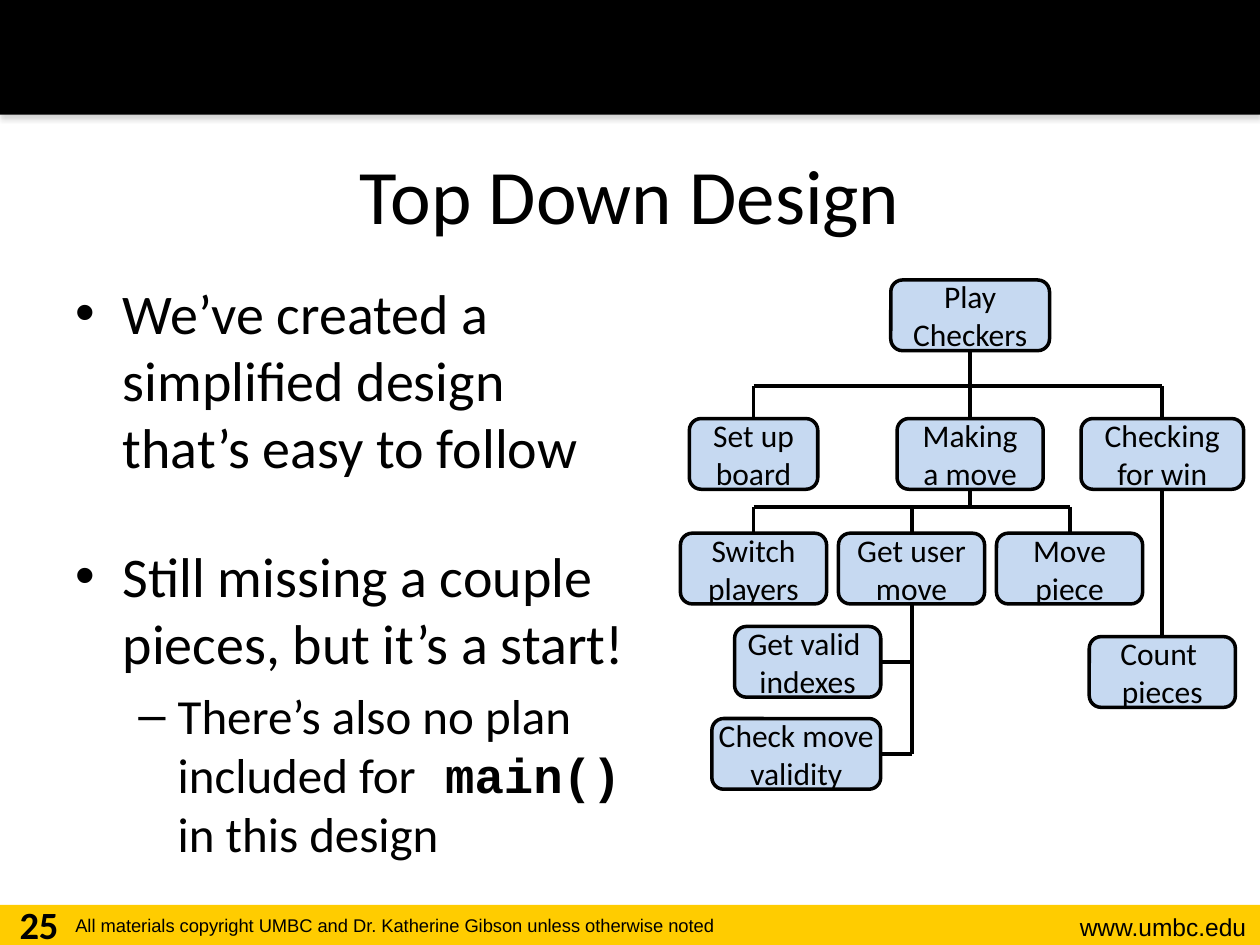
import lxml.etree
import pptx
import pptx.dml.color
import pptx.enum.shapes
import pptx.enum.text
import pptx.oxml.ns
import pptx.util

Pt = pptx.util.Pt
RGBColor = pptx.dml.color.RGBColor
Shape = pptx.enum.shapes.MSO_SHAPE
Align = pptx.enum.text.PP_ALIGN
Anchor = pptx.enum.text.MSO_ANCHOR
qn = pptx.oxml.ns.qn

BLACK = RGBColor(0x00, 0x00, 0x00)
GOLD = RGBColor(0xFF, 0xCC, 0x00)
PALE_BLUE = RGBColor(0xC6, 0xD9, 0xF1)
WIDTH, HEIGHT = 720, 540
NODE_HEIGHT = 40.4


def write(paragraph, text, size=18, face="Calibri", bold=False, align=Align.LEFT):
    """Append formatted text to a paragraph, breaking lines at newlines."""
    paragraph.alignment = align
    for index, line in enumerate(text.split("\n")):
        if index:
            paragraph.add_line_break()
        run = paragraph.add_run()
        run.text = line
        run.font.size = Pt(size)
        run.font.name = face
        run.font.bold = bold
        run.font.color.rgb = BLACK


def add_frame(slide, left, top, width, height, anchor=Anchor.TOP):
    """Add a wrapping text box and return its text frame."""
    box = slide.shapes.add_textbox(Pt(left), Pt(top), Pt(width), Pt(height))
    frame = box.text_frame
    frame.word_wrap = True
    frame.vertical_anchor = anchor
    return frame


def add_band(slide, top, height, color):
    """Add a full-width band without outline."""
    band = slide.shapes.add_shape(Shape.RECTANGLE, 0, Pt(top), Pt(WIDTH), Pt(height))
    band.shadow.inherit = False
    band.fill.solid()
    band.fill.fore_color.rgb = color
    band.line.fill.background()
    return band


def add_header(slide, height):
    """Add the black header with its soft shadow."""
    header = add_band(slide, 0, height, BLACK)
    effects = header._element.spPr.find(qn("a:effectLst"))
    shadow = lxml.etree.SubElement(
        effects, qn("a:outerShdw"), blurRad=str(Pt(3.1)), dist=str(Pt(1.8)),
        dir="5400000", rotWithShape="0")
    color = lxml.etree.SubElement(shadow, qn("a:srgbClr"), val="808080")
    lxml.etree.SubElement(color, qn("a:alpha"), val="35000")


def add_footer(slide, top, height):
    """Add the gold footer with page number, copyright line and address."""
    add_band(slide, top, height, GOLD)
    address = add_frame(slide, 576, top + 0.7, 143.3, 24.2)
    write(address.paragraphs[0], "www.umbc.edu", size=14, face="Arial", align=Align.RIGHT)
    rights = add_frame(slide, 36, top + 2.1, 472.3, 20.9)
    write(rights.paragraphs[0],
          "All materials copyright UMBC and Dr. Katherine Gibson unless otherwise noted",
          size=10.5, face="Arial")
    number = add_frame(slide, 0, top - 5.8, 44.6, 28.8)
    write(number.paragraphs[0], "25", size=22, bold=True, align=Align.CENTER)


def add_title(slide, left, top, width, height):
    """Add the centred slide title."""
    title = add_frame(slide, left, top, width, height, Anchor.MIDDLE)
    write(title.paragraphs[0], "Top Down Design", size=44, align=Align.CENTER)


def set_bullet(paragraph, mark, margin, hang, before=0):
    """Give a paragraph a bullet, a hanging indent and space before."""
    properties = paragraph._p.get_or_add_pPr()
    properties.set("marL", str(Pt(margin)))
    properties.set("indent", str(-Pt(hang)))
    lxml.etree.SubElement(properties, qn("a:buFont"), typeface="Arial")
    lxml.etree.SubElement(properties, qn("a:buChar"), char=mark)
    paragraph.space_before = Pt(before)


def add_points(slide, left, top, width, height):
    """Add the bulleted remarks."""
    frame = add_frame(slide, left, top, width, height)
    done = frame.paragraphs[0]
    set_bullet(done, "•", 27, 27)
    write(done, "We’ve created a simplified design that’s easy to follow", size=32)
    missing = frame.add_paragraph()
    set_bullet(missing, "•", 27, 27, before=35)
    write(missing, "Still missing a couple pieces, but it’s a start!", size=32)
    plan = frame.add_paragraph()
    set_bullet(plan, "–", 58.5, 22.5, before=5.6)
    write(plan, "There’s also no plan included for", size=28)
    write(plan, " main() ", size=28, face="Courier New", bold=True)
    write(plan, "in this design", size=28)


def add_line(slide, x1, y1, x2, y2):
    """Add a straight black line."""
    line = slide.shapes.add_connector(
        pptx.enum.shapes.MSO_CONNECTOR.STRAIGHT, Pt(x1), Pt(y1), Pt(x2), Pt(y2))
    line.line.color.rgb = BLACK
    line.line.width = Pt(2.25)
    lxml.etree.SubElement(line._element.spPr, qn("a:effectLst"))


def add_node(slide, text, center, top, width):
    """Add one rounded task box."""
    node = slide.shapes.add_shape(
        Shape.ROUNDED_RECTANGLE, Pt(center - width / 2), Pt(top), Pt(width), Pt(NODE_HEIGHT))
    node.shadow.inherit = False
    node.fill.solid()
    node.fill.fore_color.rgb = PALE_BLUE
    node.line.color.rgb = BLACK
    node.line.width = Pt(2)
    node.text_frame.word_wrap = "\n" not in text
    node.text_frame.vertical_anchor = Anchor.MIDDLE
    write(node.text_frame.paragraphs[0], text, align=Align.CENTER)


def add_branches(slide, center, bottom, bus, child_top, child_centers):
    """Join a parent to a row of children through a horizontal bus."""
    add_line(slide, center, bottom, center, bus)
    add_line(slide, child_centers[0], bus, child_centers[-1], bus)
    for child in child_centers:
        add_line(slide, child, bus, child, child_top)


def add_tree(slide, left, top):
    """Add the task tree, growing down from the given corner."""
    root, win = left + 165.6, left + 275.4
    steps = [left + 41.8 + 90.3 * column for column in range(3)]
    task_top, step_top, count_top = top + 79.2, top + 144.7, top + 203.8
    tasks = [steps[0], root, win]
    add_branches(slide, root, top + NODE_HEIGHT, top + 60.5, task_top, tasks)
    add_branches(slide, root, task_top + NODE_HEIGHT, top + 129.6, step_top, steps)
    add_line(slide, win, task_top + NODE_HEIGHT, win, count_top)

    add_node(slide, "Play Checkers", root, top, 90.7)
    for text, center, width in zip(
            ("Set up board", "Making a move", "Checking for win"), tasks, (73.4, 83.5, 92.9)):
        add_node(slide, text, center, task_top, width)
    for text, center in zip(("Switch players", "Get user move", "Move piece"), steps):
        add_node(slide, text, center, step_top, 83.5)
    add_node(slide, "Count \npieces", win, count_top, 83.5)

    trunk, details_right = steps[1], left + 114.5
    details = (("Get valid \nindexes", top + 198, 83.5),
               ("Check move\nvalidity", top + 250.6, 96.5))
    add_line(slide, trunk, step_top + NODE_HEIGHT, trunk, details[-1][1] + NODE_HEIGHT / 2)
    for text, detail_top, width in details:
        middle = detail_top + NODE_HEIGHT / 2
        add_line(slide, details_right, middle, trunk, middle)
        add_node(slide, text, details_right - width / 2, detail_top, width)


def main():
    """Build and save the slide."""
    deck = pptx.Presentation()
    deck.slide_width, deck.slide_height = Pt(WIDTH), Pt(HEIGHT)
    slide = deck.slides.add_slide(deck.slide_layouts[6])
    add_footer(slide, 517, 23)
    add_header(slide, 65.5)
    add_title(slide, 36, 65.5, 648, 90)
    add_points(slide, 36, 155.5, 338.4, 355.7)
    add_tree(slide, 388.8, 160)
    deck.save("out.pptx")


if __name__ == "__main__":
    main()
